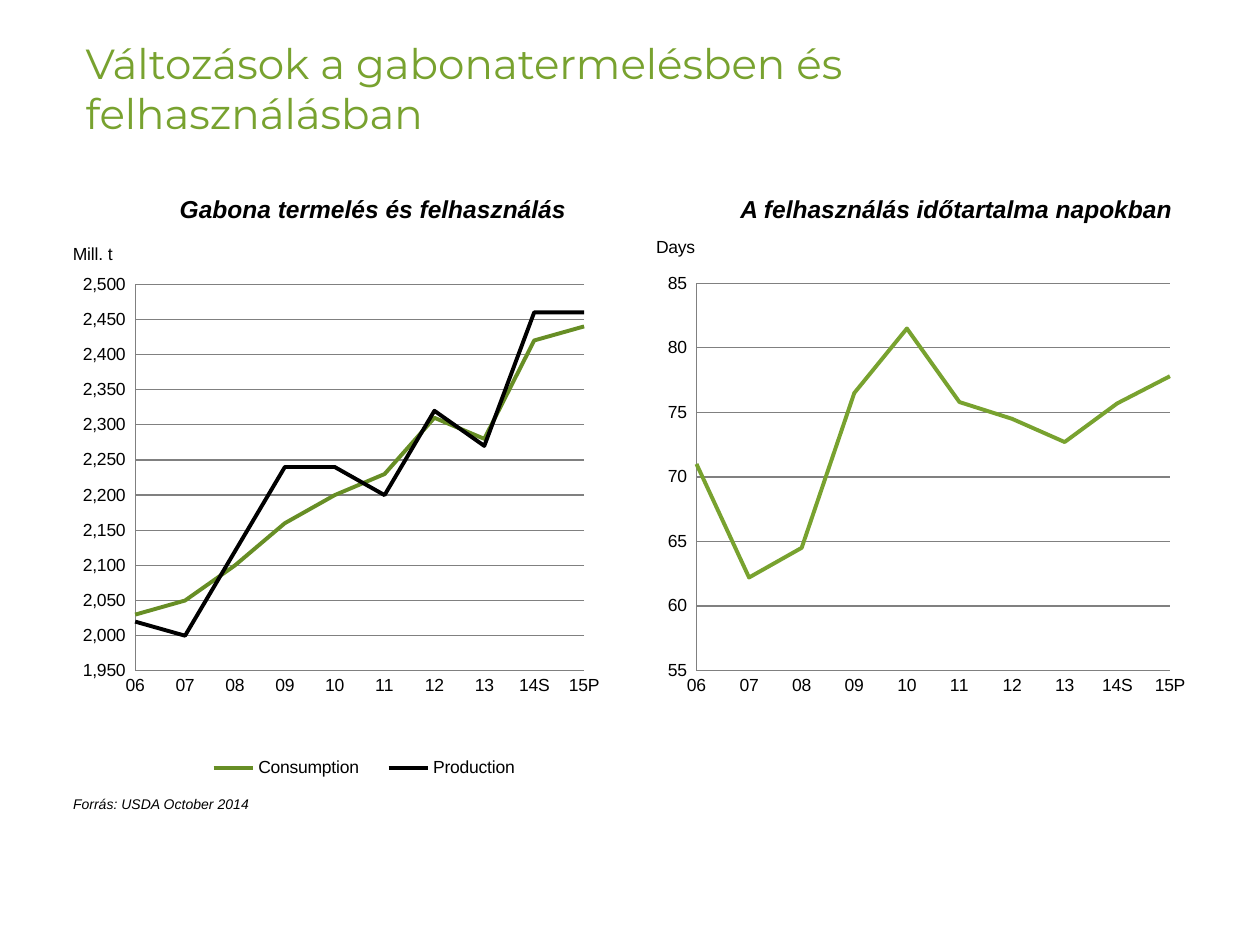
from dataclasses import dataclass
from typing import Optional

from lxml.etree import SubElement
from pptx import Presentation
from pptx.chart.data import CategoryChartData
from pptx.dml.color import RGBColor
from pptx.enum.chart import XL_CHART_TYPE, XL_LEGEND_POSITION, XL_TICK_MARK
from pptx.enum.text import MSO_ANCHOR, MSO_AUTO_SIZE, PP_ALIGN
from pptx.oxml import parse_xml
from pptx.oxml.ns import nsdecls, qn
from pptx.util import Inches, Pt

WIDTH, HEIGHT = Inches(10), Inches(7.5)
GREEN, DARK_GREEN, BLACK, GREY = "78A22F", "678E25", "000000", "808080"
YEARS = ["06", "07", "08", "09", "10", "11", "12", "13", "14S", "15P"]
Box = tuple[float, float, float, float]


@dataclass
class Line:
    name: str
    values: list[float]
    color: str


@dataclass
class Panel:
    """A headed line chart; boxes are shares of the slide, inner layouts shares of the chart."""
    heading: str
    heading_box: Box
    chart_box: Box
    plot: Box
    unit: str
    unit_at: tuple[float, float]
    scale: tuple[float, float, float]
    lines: list[Line]
    legend: Optional[Box] = None


PANELS = [
    Panel("Gabona termelés és felhasználás", (0.075, 0.2, 0.442, 0.043),
          (0.051, 0.248, 0.433, 0.588), (0.13, 0.09, 0.823, 0.696),
          "Mill. t", (0.01, 0.01), (1950, 2500, 50),
          [Line("Consumption", [2030, 2050, 2100, 2160, 2200, 2230, 2310, 2280, 2420, 2440],
                DARK_GREEN),
           Line("Production", [2020, 2000, 2120, 2240, 2240, 2200, 2320, 2270, 2460, 2460],
                BLACK)],
          legend=(0.23, 0.93, 0.64, 0.06)),
    Panel("A felhasználás időtartalma napokban", (0.538, 0.196, 0.442, 0.047),
          (0.516, 0.237, 0.433, 0.599), (0.085, 0.105, 0.868, 0.684),
          "Days", (0.005, 0.015), (55, 85, 5),
          [Line("Series 1", [71, 62.2, 64.5, 76.5, 81.5, 75.8, 74.5, 72.7, 75.7, 77.8],
                GREEN)]),
]


def rgb(color: str) -> RGBColor:
    return RGBColor.from_string(color)


def place(box: Box) -> tuple[int, int, int, int]:
    x, y, w, h = box
    return int(x * WIDTH), int(y * HEIGHT), int(w * WIDTH), int(h * HEIGHT)


def style(font, size: float, color: str = BLACK, name: str = "Arial",
          bold: bool = False, italic: bool = False) -> None:
    font.size, font.name, font.bold, font.italic = Pt(size), name, bold, italic
    font.color.rgb = rgb(color)


def add_label(slide, text: str, box: Box, size: float, bold: bool = False):
    frame = slide.shapes.add_textbox(*place(box)).text_frame
    frame.word_wrap = True
    run = frame.paragraphs[0].add_run()
    run.text = text
    style(run.font, size, bold=bold, italic=True)
    return frame


def set_layout(parent, index: int, shares: tuple, inner: bool = False) -> None:
    """Give a chart part a manual layout, as its child number index."""
    for old in parent.findall(qn("c:layout")):
        parent.remove(old)
    layout = parse_xml(f"<c:layout {nsdecls('c')}><c:manualLayout/></c:layout>")
    settings = [("layoutTarget", "inner")] if inner else []
    settings += [("xMode", "edge"), ("yMode", "edge"), *zip("xywh", shares)]
    for tag, value in settings:
        SubElement(layout[0], qn(f"c:{tag}")).set("val", str(value))
    parent.insert(index, layout)


def format_axes(chart, panel: Panel) -> None:
    for axis in (chart.category_axis, chart.value_axis):
        axis.major_tick_mark = axis.minor_tick_mark = XL_TICK_MARK.NONE
        axis.format.line.color.rgb = rgb(GREY)
    values = chart.value_axis
    values.minimum_scale, values.maximum_scale, values.major_unit = panel.scale
    values.has_major_gridlines = True
    grid = values.major_gridlines.format.line
    grid.color.rgb, grid.width = rgb(GREY), Pt(0.75)
    values.tick_labels.number_format = r"#,##0_);[Red]\(#,##0\)"
    values.tick_labels.number_format_is_linked = False

    # Lines start on the value axis rather than half a category in
    element = values._element
    for old in element.findall(qn("c:crossBetween")):
        element.remove(old)
    element.find(qn("c:crosses")).addnext(
        parse_xml(f'<c:crossBetween {nsdecls("c")} val="midCat"/>'))

    frame = values.axis_title.text_frame
    run = frame.paragraphs[0].add_run()
    run.text = panel.unit
    style(run.font, 10)
    frame._txBody.bodyPr.set("rot", "0")
    frame._txBody.bodyPr.set("vert", "horz")
    set_layout(values.axis_title._element, 1, panel.unit_at)


def add_panel(slide, panel: Panel) -> None:
    data = CategoryChartData()
    data.categories = YEARS
    for line in panel.lines:
        data.add_series(line.name, line.values)
    chart = slide.shapes.add_chart(
        XL_CHART_TYPE.LINE, *place(panel.chart_box), data).chart
    style(chart.font, 10)
    chart.has_title = False
    chart.plots[0].vary_by_categories = False
    for series, line in zip(chart.plots[0].series, panel.lines):
        series.smooth = False
        series.format.line.color.rgb = rgb(line.color)
        series.format.line.width = Pt(2.25)
    format_axes(chart, panel)
    set_layout(chart._chartSpace.chart.plotArea, 0, panel.plot, inner=True)
    chart.has_legend = panel.legend is not None
    if panel.legend:
        chart.legend.position = XL_LEGEND_POSITION.BOTTOM
        chart.legend.include_in_layout = False
        style(chart.legend.font, 10)
        set_layout(chart.legend._element, 1, panel.legend)

    heading = add_label(slide, panel.heading, panel.heading_box, 14, bold=True)
    heading.vertical_anchor = MSO_ANCHOR.BOTTOM
    heading.paragraphs[0].alignment = PP_ALIGN.CENTER


def add_title(slide, text: str) -> None:
    title = slide.shapes.title
    title.left, title.top, title.width, title.height = place((0.058, 0.033, 0.883, 0.124))
    frame = title.text_frame
    frame.auto_size = MSO_AUTO_SIZE.NONE
    frame.vertical_anchor = MSO_ANCHOR.TOP
    frame.paragraphs[0].alignment = PP_ALIGN.LEFT
    run = frame.paragraphs[0].add_run()
    run.text = text
    style(run.font, 24, GREEN, "Montserrat")


def main() -> None:
    deck = Presentation()
    deck.slide_width, deck.slide_height = WIDTH, HEIGHT
    slide = deck.slides.add_slide(deck.slide_layouts[5])
    add_title(slide, "Változások a gabonatermelésben és felhasználásban")
    for panel in PANELS:
        add_panel(slide, panel)
    source = add_label(slide, "Forrás: USDA October 2014", (0.058, 0.836, 0.154, 0.028), 8)
    source.word_wrap = False
    source.margin_left, source.margin_right = 0, Inches(0.12)
    source.margin_top = source.margin_bottom = Inches(0.04)
    deck.save("out.pptx")


if __name__ == "__main__":
    main()
